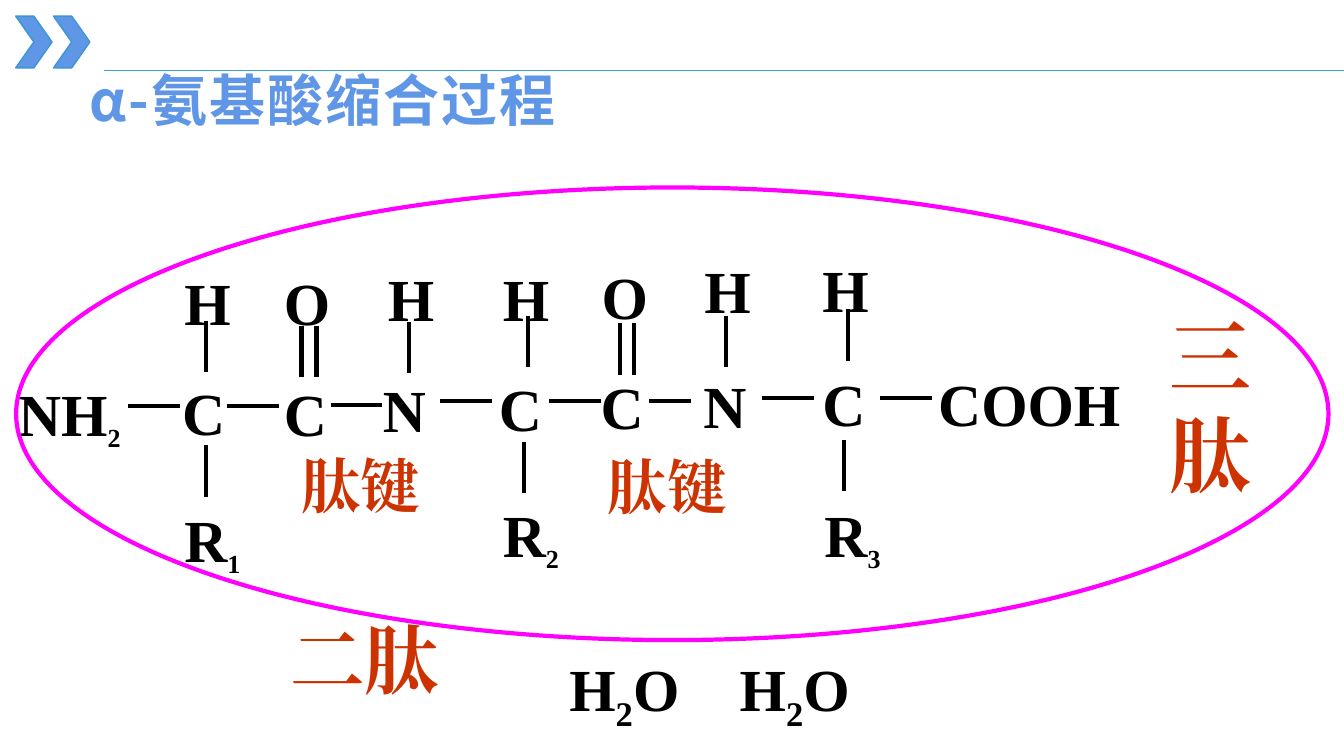
from itertools import groupby
from lxml import etree
from pptx import Presentation
from pptx.dml.color import RGBColor
from pptx.enum.shapes import MSO_CONNECTOR, MSO_SHAPE
from pptx.enum.text import MSO_ANCHOR, PP_ALIGN
from pptx.oxml.ns import qn
from pptx.util import Pt

STRAIGHT = MSO_CONNECTOR.STRAIGHT
CHEVRON, OVAL = MSO_SHAPE.CHEVRON, MSO_SHAPE.OVAL
MIDDLE, LEFT = MSO_ANCHOR.MIDDLE, PP_ALIGN.LEFT
SERIF, SANS = "Times New Roman", "Noto Sans CJK SC"
BLACK, RED, BLUE, MAGENTA = "000000", "CC3300", "6096E6", "FF00FF"
BODY = 42.6


def rgb(code):
    return RGBColor.from_string(code)


def add_run(p, text, size, font, color):
    r = p.add_run()
    r.text = text
    r.font.color.rgb = rgb(color)
    for key, value in {"size": Pt(size), "name": font, "bold": True}.items():
        setattr(r.font, key, value)
    etree.SubElement(r.font._element, qn("a:ea")).set("typeface", font)
    return r


prs = Presentation()
prs.slide_width, prs.slide_height = Pt(960), Pt(540)
s = prs.slides.add_slide(prs.slide_layouts[5])

title = s.shapes.title
for key, value in {"left": 56.9, "top": 43.2, "width": 386, "height": 55.4}.items():
    setattr(title, key, Pt(value))
tf = title.text_frame
tf.word_wrap = True
tf.vertical_anchor = MIDDLE
p = tf.paragraphs[0]
p.alignment = LEFT
r = add_run(p, "α-氨基酸缩合过程", 40, SANS, BLUE)
r.font._element.set("spc", "150")

for i in range(2):
    sp = s.shapes.add_shape(CHEVRON, Pt(11.2 + 27 * i), Pt(11.5), Pt(26), Pt(37))
    sp.shadow.inherit = False
    sp.fill.solid()
    sp.fill.fore_color.rgb = rgb(BLUE)
    sp.line.color.rgb = rgb("3B96D3")
    sp.line.width = Pt(1)

rule = [(74.2, 50.4, 960, 50.4, "3DA1D2", 0.5)]
horizontal_bonds = [(x, y, x + length, y, BLACK, 3) for x, y, length in [
    (91.4, 290, 37), (162, 290, 37), (236.2, 289.4, 37), (314.6, 286.6, 37),
    (392.4, 286.6, 37), (463.7, 286.6, 30), (544.3, 284.4, 37), (628.6, 284.4, 37),
]]
vertical_bonds = [(x, y, x, y + 37, BLACK, 3) for x, y in [
    (146.9, 229), (146.9, 318.2), (215.3, 232.6), (226.1, 232.6), (292.3, 229.7),
    (377.3, 225.4), (374.4, 315.4), (442.8, 230.8), (452.9, 230.8),
    (518.4, 225.4), (605.5, 221), (602.9, 314),
]]
for x1, y1, x2, y2, color, width in rule + horizontal_bonds + vertical_bonds:
    line = s.shapes.add_connector(STRAIGHT, Pt(x1), Pt(y1), Pt(x2), Pt(y2))
    line.line.color.rgb = rgb(color)
    line.line.width = Pt(width)
    etree.SubElement(line._element.spPr, qn("a:effectLst"))

labels = [(text, x, y, w, 59, BODY, BLACK) for text, x, y, w in [
    ("NH2", 5.8, 261.4, 112), ("C", 123.1, 260.6, 52), ("H", 124.6, 182.2, 60),
    ("R1", 124.6, 351.4, 82), ("C", 195.8, 261.4, 52), ("O", 195.8, 182.2, 52),
    ("H", 270, 179.3, 60), ("N", 266.4, 258.5, 60), ("C", 349.2, 257.8, 52),
    ("H", 352.1, 179.3, 60), ("R2", 352.1, 347.8, 104), ("C", 421.9, 256.3, 52),
    ("O", 422.6, 177.8, 60), ("H", 496.1, 173.5, 60), ("N", 495.4, 255.6, 60),
    ("C", 580.3, 254.2, 52), ("H", 580.3, 172.8, 60), ("R3", 581.8, 347.8, 104),
    ("COOH", 663.1, 254.2, 150), ("H2O", 399.6, 457.9, 113), ("H2O", 521.3, 457.9, 113),
]] + [
    ("肽键", 208.1, 313.2, 113, 59, BODY, RED),
    ("肽键", 427, 313.9, 113, 59, BODY, RED),
    ("二肽", 200.2, 429.1, 144, 72, 53.4, RED),
    ("三肽", 828, 208.1, 106, 149, 58.6, RED),
]
for text, x, y, w, h, size, color in labels:
    tf = s.shapes.add_textbox(Pt(x), Pt(y), Pt(w), Pt(h)).text_frame
    tf.word_wrap = True
    tf.margin_top = Pt(round(0.18 * size, 1))
    sub_size = 32 if text[-1].isdigit() else size
    for is_sub, chars in groupby(text, str.isdigit):
        r = add_run(tf.paragraphs[0], "".join(chars), sub_size if is_sub else size, SERIF, color)
        if is_sub:
            r.font._element.set("baseline", "-25000")

sp = s.shapes.add_shape(OVAL, Pt(11.5), Pt(133.9), Pt(937.4), Pt(323.3))
sp.shadow.inherit = False
sp.fill.background()
sp.line.color.rgb = rgb(MAGENTA)
sp.line.width = Pt(3)

prs.save("out.pptx")
